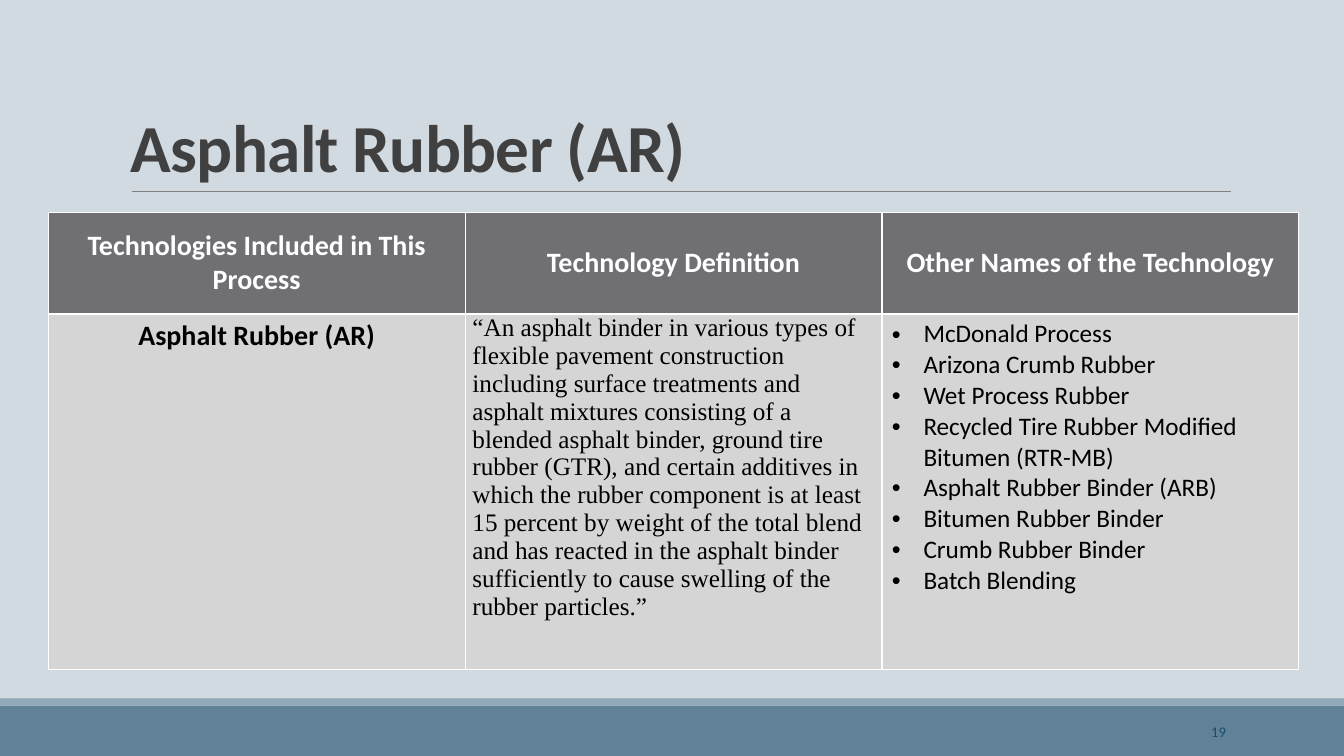
from dataclasses import dataclass

from lxml.etree import SubElement
from pptx import Presentation
from pptx.dml.color import RGBColor
from pptx.enum.shapes import MSO_CONNECTOR, MSO_SHAPE
from pptx.enum.text import MSO_ANCHOR, MSO_AUTO_SIZE, PP_ALIGN
from pptx.oxml.ns import qn
from pptx.util import Pt

EMU_PER_PX = 9525
COLORS = {
    "background": "D1D9E1",
    "footer": "618197",
    "stripe": "92A9B9",
    "rule": "808080",
    "title": "404040",
    "header": "6F6F74",
    "body": "D5D5D6",
    "white": "FFFFFF",
    "black": "000000",
    "number": "184E6D",
}


@dataclass(frozen=True)
class Bar:
    top: int
    height: int
    color: str


@dataclass(frozen=True)
class Column:
    heading: str
    lines: tuple[str, ...]
    size: int = 18
    font: str = "Calibri"
    bold: bool = False
    align: PP_ALIGN = PP_ALIGN.LEFT
    bullet: bool = False
    tight: bool = False


WIDTH, HEIGHT = 1280, 720
BARS = [Bar(672, 48, "footer"), Bar(665, 7, "stripe")]
TABLE_LEFT, TABLE_TOP, COLUMN_WIDTH = 46, 202, 397
ROW_HEIGHTS = (97, 339)
BULLET_INDENT = 30
COLUMNS = [
    Column("Technologies Included in This Process", ("Asphalt Rubber (AR)",),
           size=20, bold=True, align=PP_ALIGN.CENTER),
    Column("Technology Definition", (
        "“An asphalt binder in various types of flexible pavement construction "
        "including surface treatments and asphalt mixtures consisting of a "
        "blended asphalt binder, ground tire rubber (GTR), and certain additives "
        "in which the rubber component is at least 15 percent by weight of the "
        "total blend and has reacted in the asphalt binder sufficiently to cause "
        "swelling of the rubber particles.”",),
        font="Times New Roman", tight=True),
    Column("Other Names of the Technology", (
        "McDonald Process",
        "Arizona Crumb Rubber",
        "Wet Process Rubber",
        "Recycled Tire Rubber Modified Bitumen (RTR-MB)",
        "Asphalt Rubber Binder (ARB)",
        "Bitumen Rubber Binder",
        "Crumb Rubber Binder",
        "Batch Blending",
    ), bullet=True),
]


def px(n: int) -> int:
    return n * EMU_PER_PX


def rgb(name: str) -> RGBColor:
    return RGBColor.from_string(COLORS[name])


def write(tf, *lines: str, size: float, color: str, font: str = "Calibri",
          bold: bool = False, align: PP_ALIGN = PP_ALIGN.LEFT,
          spacing: float | None = None, tracking: int | None = None,
          bullet: bool = False) -> None:
    for i, line in enumerate(lines):
        p = tf.add_paragraph() if i else tf.paragraphs[0]
        p.alignment = align
        if spacing:
            p.line_spacing = spacing
        if bullet:
            pPr = p._p.get_or_add_pPr()
            pPr.set("marL", str(px(BULLET_INDENT)))
            pPr.set("indent", str(-px(BULLET_INDENT)))
            SubElement(pPr, qn("a:buFont"), typeface="Arial")
            SubElement(pPr, qn("a:buChar"), char="•")
        r = p.add_run()
        r.text = line
        r.font.size = Pt(size)
        r.font.name = font
        r.font.bold = bold
        r.font.color.rgb = rgb(color)
        if tracking:
            r._r.get_or_add_rPr().set("spc", str(tracking))


def add_bar(s, bar: Bar) -> None:
    sp = s.shapes.add_shape(MSO_SHAPE.RECTANGLE, 0, px(bar.top), px(WIDTH), px(bar.height))
    sp.shadow.inherit = False
    sp.fill.solid()
    sp.fill.fore_color.rgb = rgb(bar.color)
    sp.line.fill.background()


def add_rule(s, left: int, right: int, y: int) -> None:
    line = s.shapes.add_connector(MSO_CONNECTOR.STRAIGHT, px(left), px(y), px(right), px(y))
    line.line.color.rgb = rgb("rule")
    line.line.width = Pt(0.5)
    SubElement(line._element.spPr, qn("a:effectLst"))


def style_cell(cell, color: str) -> None:
    tcPr = cell._tc.get_or_add_tcPr()
    for side in ("lnL", "lnR", "lnT", "lnB"):
        ln = SubElement(tcPr, qn(f"a:{side}"), w=str(Pt(1)))
        fill = SubElement(ln, qn("a:solidFill"))
        SubElement(fill, qn("a:srgbClr"), val=COLORS["white"])
    cell.fill.solid()
    cell.fill.fore_color.rgb = rgb(color)


def add_table(s) -> None:
    table = s.shapes.add_table(
        len(ROW_HEIGHTS), len(COLUMNS), px(TABLE_LEFT), px(TABLE_TOP),
        px(COLUMN_WIDTH * len(COLUMNS)), px(sum(ROW_HEIGHTS))).table
    table.horz_banding = False
    for row, height in zip(table.rows, ROW_HEIGHTS):
        row.height = px(height)
    for i, column in enumerate(COLUMNS):
        table.columns[i].width = px(COLUMN_WIDTH)
        head, body = table.cell(0, i), table.cell(1, i)
        style_cell(head, "header")
        style_cell(body, "body")
        head.vertical_anchor = MSO_ANCHOR.MIDDLE
        write(head.text_frame, column.heading, size=20, color="white", bold=True,
              align=PP_ALIGN.CENTER)
        if column.tight:
            body.margin_left = body.margin_right = px(7)
            body.margin_top = body.margin_bottom = 0
        write(body.text_frame, *column.lines, size=column.size, color="black",
              font=column.font, bold=column.bold, align=column.align,
              bullet=column.bullet)


def add_title(s, text: str) -> None:
    sp = s.shapes.title
    sp.left, sp.top, sp.width, sp.height = px(115), px(30), px(1056), px(152)
    tf = sp.text_frame
    tf.auto_size = MSO_AUTO_SIZE.NONE
    tf.vertical_anchor = MSO_ANCHOR.BOTTOM
    write(tf, text, size=48, color="title", bold=True, spacing=0.85, tracking=-50)


def add_number(s, text: str) -> None:
    sp = s.shapes.add_textbox(px(1040), px(678), px(137), px(38))
    tf = sp.text_frame
    tf.word_wrap = True
    tf.vertical_anchor = MSO_ANCHOR.MIDDLE
    write(tf, text, size=10.5, color="number", align=PP_ALIGN.RIGHT)


def main() -> None:
    prs = Presentation()
    prs.slide_width, prs.slide_height = px(WIDTH), px(HEIGHT)
    s = prs.slides.add_slide(prs.slide_layouts.get_by_name("Title Only"))
    s.background.fill.solid()
    s.background.fill.fore_color.rgb = rgb("background")
    for bar in BARS:
        add_bar(s, bar)
    add_rule(s, 126, 1172, 182)
    add_title(s, "Asphalt Rubber (AR)")
    add_table(s)
    add_number(s, "19")
    prs.save("out.pptx")


if __name__ == "__main__":
    main()
